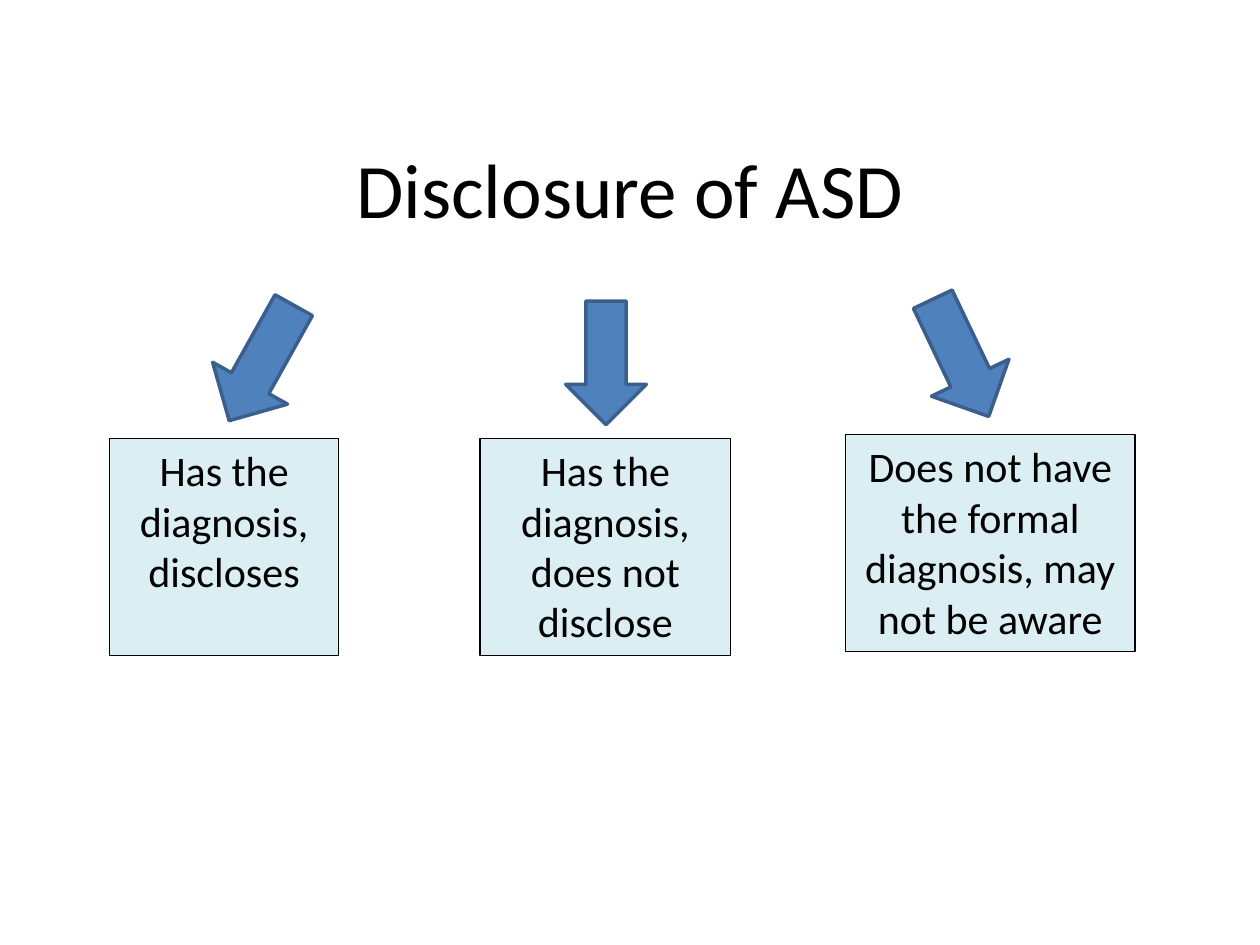
from pptx import Presentation
from pptx.dml.color import RGBColor
from pptx.enum.shapes import MSO_SHAPE as SHAPE
from pptx.enum.text import MSO_ANCHOR as ANCHOR, PP_ALIGN as ALIGN
from pptx.util import Pt

BLACK = RGBColor(0x00, 0x00, 0x00)
PALE_BLUE = RGBColor(0xDB, 0xEE, 0xF4)
BLUE = RGBColor(0x4F, 0x81, 0xBD)
DARK_BLUE = RGBColor(0x3A, 0x5F, 0x8C)

# text, box (left, top, width), arrow (left, top, width, height, rotation)
OUTCOMES = [
    ("Has the diagnosis, discloses",
     (62.6, 250.6, 131), (111.6, 182.9, 75.6, 49, 119.2)),
    ("Has the diagnosis, does not disclose",
     (274.3, 250.6, 143.3), (311, 184.3, 70.6, 46.1, 90)),
    ("Does not have the formal diagnosis, may not be aware",
     (483.1, 248.4, 165.6), (511.9, 180, 74.2, 49, 64.5)),
]
BOX_HEIGHT = 123.8


def add_filled(kind, left, top, width, height, fill, line, line_width):
    s = slide.shapes.add_shape(kind, Pt(left), Pt(top), Pt(width), Pt(height))
    s.shadow.inherit = False
    s.fill.solid()
    s.fill.fore_color.rgb = fill
    s.line.color.rgb = line
    s.line.width = Pt(line_width)
    return s


def write_centred(tf, text, size):
    tf.word_wrap = True
    p = tf.paragraphs[0]
    p.text = text
    p.alignment = ALIGN.CENTER
    p.font.name = "Calibri"
    p.font.size = Pt(size)
    p.font.color.rgb = BLACK


prs = Presentation()
prs.slide_width, prs.slide_height = Pt(720), Pt(540)
slide = prs.slides.add_slide(prs.slide_layouts[5])

title = slide.shapes.title
title.left, title.top, title.width, title.height = Pt(36), Pt(62), Pt(648), Pt(90)
title.text_frame.vertical_anchor = ANCHOR.MIDDLE
write_centred(title.text_frame, "Disclosure of ASD", 44)

for text, box_place, (*arrow_place, rotation) in OUTCOMES:
    box = add_filled(SHAPE.RECTANGLE, *box_place, BOX_HEIGHT, PALE_BLUE, BLACK, 0.75)
    box.text_frame.vertical_anchor = ANCHOR.TOP
    write_centred(box.text_frame, text, 24)

    arrow = add_filled(SHAPE.RIGHT_ARROW, *arrow_place, BLUE, DARK_BLUE, 2)
    arrow.rotation = rotation

prs.save("out.pptx")
